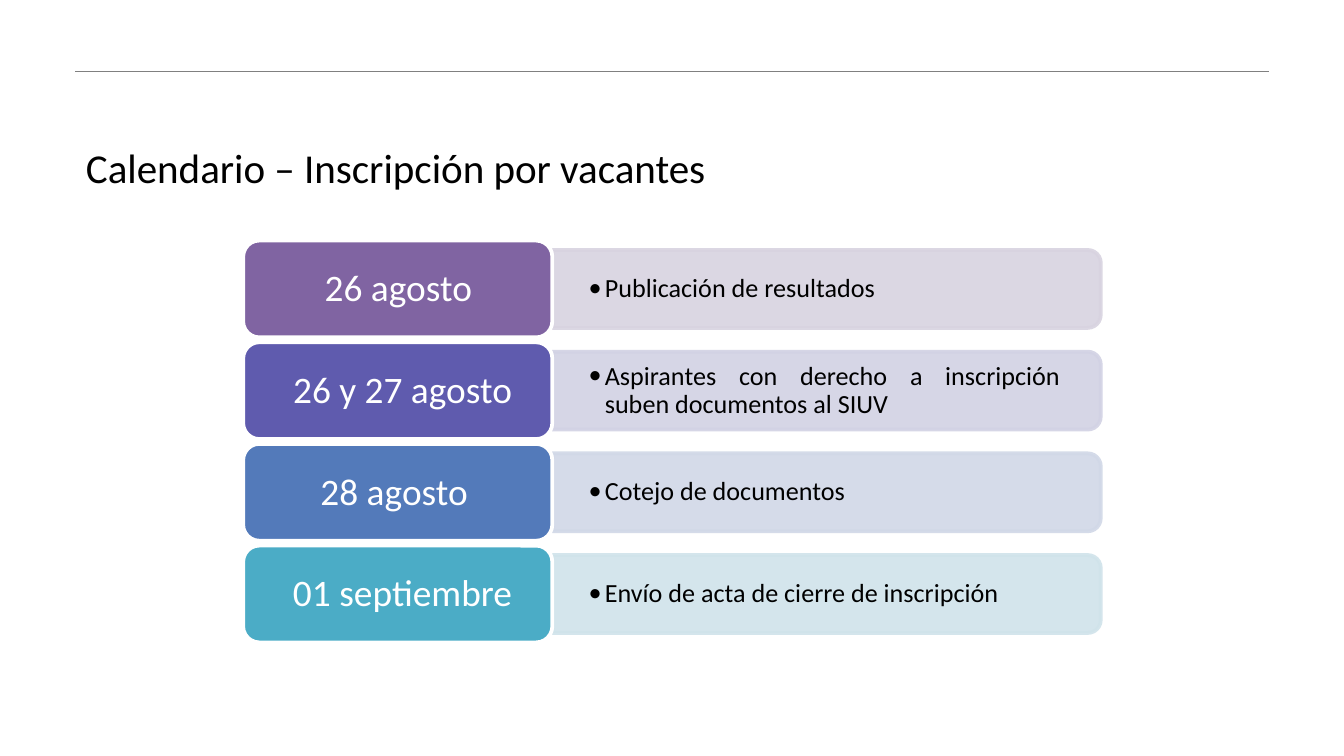
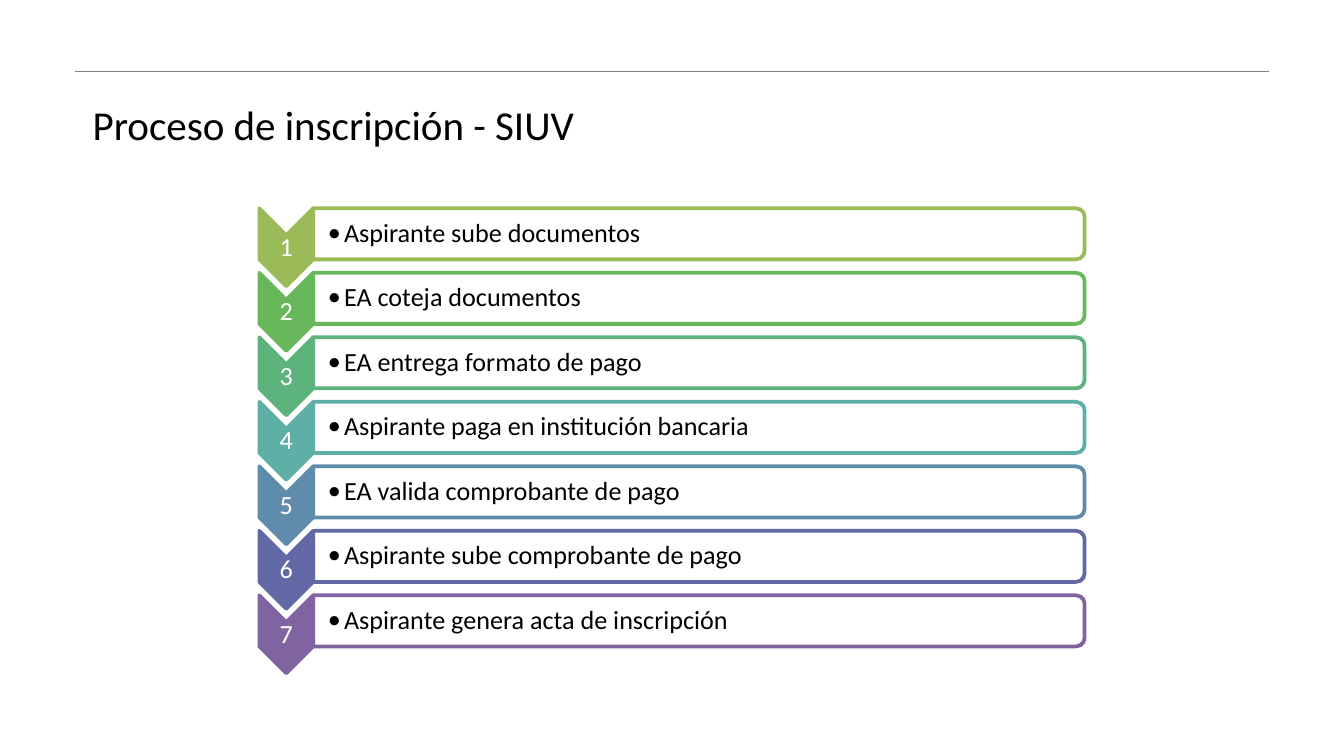
"""Build two slides on enrolment: the calendar and the process steps."""
from lxml.etree import SubElement
from pptx import Presentation
from pptx.dml.color import RGBColor
from pptx.enum.shapes import MSO_CONNECTOR, MSO_SHAPE
from pptx.enum.text import MSO_ANCHOR, PP_ALIGN
from pptx.oxml.ns import qn
from pptx.util import Inches, Pt

FONT = "Calibri"
BLACK = RGBColor(0x00, 0x00, 0x00)
WHITE = RGBColor(0xFF, 0xFF, 0xFF)
GRAY = RGBColor(0x80, 0x80, 0x80)
PURPLE = RGBColor(0x80, 0x64, 0xA2)
VIOLET = RGBColor(0x5F, 0x5B, 0xAE)
BLUE = RGBColor(0x53, 0x7A, 0xBA)
AQUA = RGBColor(0x4B, 0xAC, 0xC6)
PALE_PURPLE = RGBColor(0xD8, 0xD3, 0xE0)
PALE_VIOLET = RGBColor(0xD2, 0xD2, 0xE4)
PALE_BLUE = RGBColor(0xD1, 0xD8, 0xE7)
PALE_AQUA = RGBColor(0xD0, 0xE3, 0xEA)
OLIVE = RGBColor(0x9B, 0xBB, 0x59)
GREEN = RGBColor(0x69, 0xB7, 0x5B)
EMERALD = RGBColor(0x5C, 0xB3, 0x7C)
TEAL = RGBColor(0x5E, 0xAF, 0xA6)
STEEL = RGBColor(0x60, 0x8C, 0xAB)
INDIGO = RGBColor(0x62, 0x67, 0xA6)


def add_box(slide, kind, left, top, width, height, fill, line, turned=True, translucent=0):
    """Add a shape by its visible frame; the first translucent colours get 90 % opacity."""
    if turned:
        left, top = left + (width - height) / 2, top + (height - width) / 2
        width, height = height, width
    shape = slide.shapes.add_shape(kind, Inches(left), Inches(top), Inches(width), Inches(height))
    shape.rotation = 90 if turned else 0
    shape.shadow.inherit = False
    shape.fill.solid()
    shape.fill.fore_color.rgb = fill
    shape.line.color.rgb = line
    shape.line.width = Pt(2)
    for color in list(shape.element.spPr.iter(qn("a:srgbClr")))[:translucent]:
        SubElement(color, qn("a:alpha")).set("val", "90000")


def add_text(slide, text, left, top, width, height, size, color, insets, align, bullet=False):
    """Add a one-paragraph text box, centred vertically."""
    box = slide.shapes.add_textbox(Inches(left), Inches(top), Inches(width), Inches(height))
    frame = box.text_frame
    frame.word_wrap = True
    frame.vertical_anchor = MSO_ANCHOR.MIDDLE
    inset_left, inset_top, inset_right, inset_bottom = insets
    frame.margin_left, frame.margin_right = Inches(inset_left), Inches(inset_right)
    frame.margin_top, frame.margin_bottom = Inches(inset_top), Inches(inset_bottom)
    paragraph = frame.paragraphs[0]
    paragraph.alignment = align
    paragraph.line_spacing = 0.9
    if bullet:
        paragraph.level = 1
        properties = paragraph._p.get_or_add_pPr()
        properties.set("marL", str(Inches(0.12)))
        properties.set("indent", str(Inches(-0.12)))
        SubElement(properties, qn("a:buFont")).set("typeface", FONT)
        SubElement(properties, qn("a:buChar")).set("char", "•")
    paragraph.font.size = Pt(size)
    run = paragraph.add_run()
    run.text = text
    run.font.name = FONT
    run.font.size = Pt(size)
    run.font.color.rgb = color


presentation = Presentation()
presentation.slide_width = Inches(10)
presentation.slide_height = Inches(10) * 9 // 16
layout = presentation.slide_layouts[5]

slides = []
for title_text, left, top in [
    ("Calendario – Inscripción por vacantes", 0.56, 1.09),
    ("Proceso de inscripción - SIUV", 0.61, 0.77),
]:
    slide = presentation.slides.add_slide(layout)
    title = slide.shapes.title
    title.left, title.top = Inches(left), Inches(top)
    title.width, title.height = Inches(8.79), Inches(0.31)
    frame = title.text_frame
    frame.vertical_anchor = MSO_ANCHOR.MIDDLE
    frame.margin_left = frame.margin_right = Inches(0.08)
    frame.margin_top = frame.margin_bottom = Inches(0.04)
    paragraph = frame.paragraphs[0]
    paragraph.alignment = PP_ALIGN.LEFT
    run = paragraph.add_run()
    run.text = title_text
    run.font.name = FONT
    run.font.size = Pt(22)
    run.font.color.rgb = BLACK
    slides.append(slide)
calendar_slide, process_slide = slides

rule = calendar_slide.shapes.add_connector(
    MSO_CONNECTOR.STRAIGHT, Inches(0.56), Inches(0.53), Inches(9.44), Inches(0.53))
rule.line.color.rgb = GRAY
rule.line.width = Pt(0.75)
SubElement(rule.element.spPr, qn("a:effectLst"))
layout.shapes.element.append(rule.element)

calendar = [
    ("26 agosto", "Publicación de resultados", PURPLE, PALE_PURPLE, PP_ALIGN.JUSTIFY),
    (" 26 y 27 agosto", "Aspirantes con derecho a inscripción suben documentos al SIUV",
     VIOLET, PALE_VIOLET, PP_ALIGN.JUSTIFY),
    ("28 agosto ", "Cotejo de documentos", BLUE, PALE_BLUE, PP_ALIGN.JUSTIFY),
    (" 01 septiembre", "Envío de acta de cierre de inscripción", AQUA, PALE_AQUA, PP_ALIGN.LEFT),
]
for row, (date, activity, color, pale, align) in enumerate(calendar):
    top = 1.79 + 2.27 * row / 3
    add_box(calendar_slide, MSO_SHAPE.ROUND_2_SAME_RECTANGLE, 4.11, top + 0.07, 4.08, 0.58,
            pale, pale, translucent=2)
    add_text(calendar_slide, activity, 4.11, top + 0.1, 4.05, 0.52, 14, BLACK,
             (0.27, 0.14, 0.27, 0.14), align, bullet=True)
    add_box(calendar_slide, MSO_SHAPE.ROUNDED_RECTANGLE, 1.81, top, 2.3, 0.72,
            color, WHITE, turned=False)
    add_text(calendar_slide, date, 1.85, top + 0.04, 2.23, 0.65, 20, WHITE,
             (0.08, 0.04, 0.08, 0.04), PP_ALIGN.CENTER)

steps = [
    ("Aspirante sube documentos", OLIVE),
    ("EA coteja documentos", GREEN),
    ("EA entrega formato de pago", EMERALD),
    ("Aspirante paga en institución bancaria", TEAL),
    ("EA valida comprobante de pago", STEEL),
    ("Aspirante sube comprobante de pago", INDIGO),
    ("Aspirante genera acta de inscripción", PURPLE),
]
for row, (step, color) in enumerate(steps):
    top = 1.55 + 0.48 * row
    add_box(process_slide, MSO_SHAPE.CHEVRON, 1.93, top, 0.4, 0.58, color, color)
    add_text(process_slide, str(row + 1), 1.93, top + 0.21, 0.4, 0.17, 14, WHITE,
             (0.01, 0.01, 0.01, 0.01), PP_ALIGN.CENTER)
    add_box(process_slide, MSO_SHAPE.ROUND_2_SAME_RECTANGLE, 2.33, top, 5.74, 0.38,
            WHITE, color, translucent=1)
    add_text(process_slide, step, 2.33, top + 0.02, 5.72, 0.34, 14, BLACK,
             (0.11, 0.01, 0.01, 0.01), PP_ALIGN.LEFT, bullet=True)

presentation.save("out.pptx")
